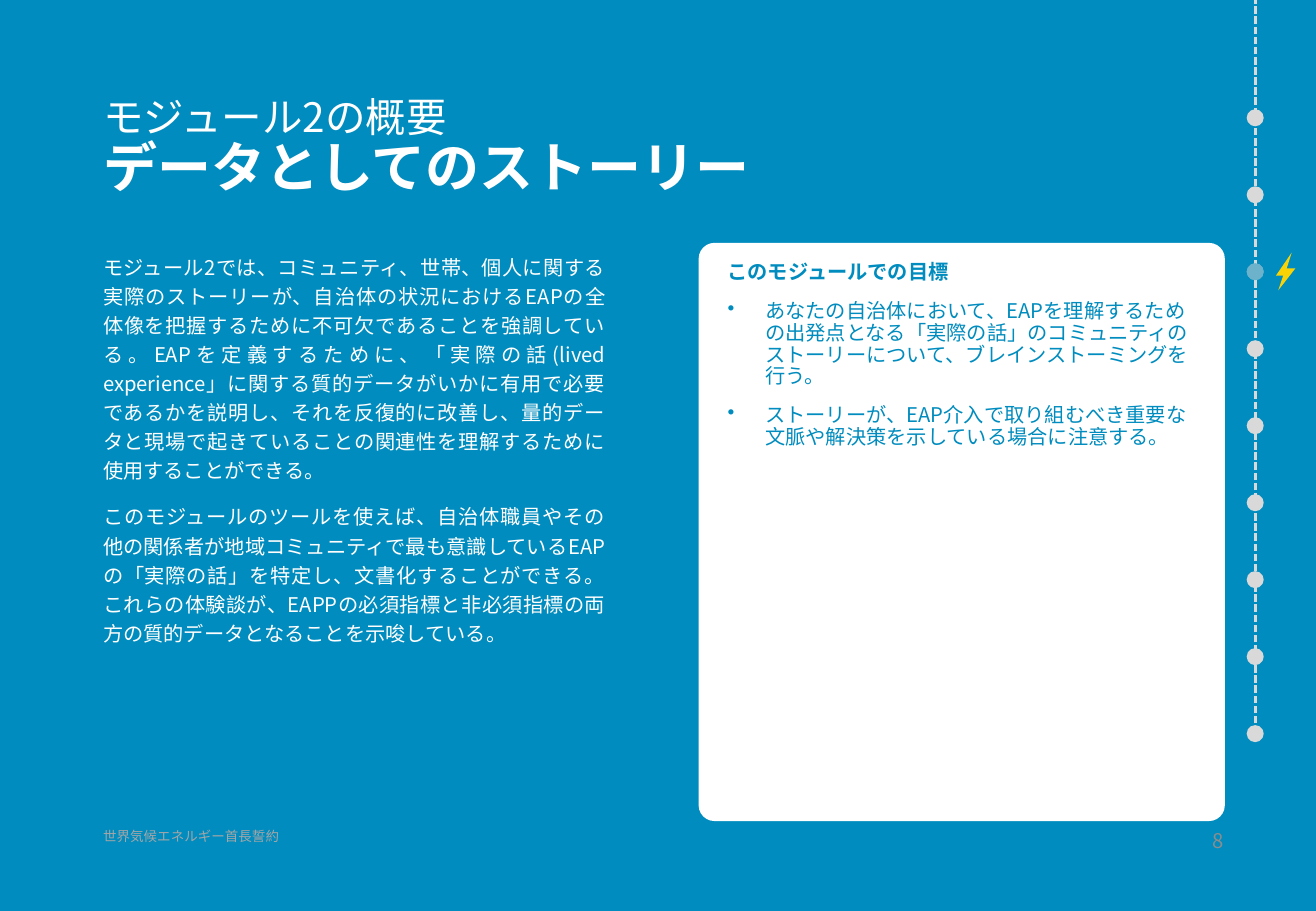
from dataclasses import dataclass

import lxml.etree
import pptx
import pptx.dml.color
import pptx.enum.dml
import pptx.enum.shapes
import pptx.enum.text
import pptx.oxml.ns
import pptx.util

Inches = pptx.util.Inches
Pt = pptx.util.Pt
Shapes = pptx.enum.shapes.MSO_SHAPE
Align = pptx.enum.text.PP_ALIGN
qn = pptx.oxml.ns.qn


@dataclass(frozen=True)
class Theme:
    font: str = "Noto Sans CJK JP"
    blue: str = "008CBE"
    white: str = "FFFFFF"
    grey: str = "D9D9D9"
    footer_grey: str = "A6A6A6"
    number_grey: str = "8C8C8C"
    yellow: str = "FAD307"
    footer_size: int = 8
    body_size: int = 12
    lead_size: int = 24
    title_size: int = 32


THEME = Theme()

BODY = [
    "モジュール2では、コミュニティ、世帯、個人に関する実際のストーリーが、自治体の状況におけるEAPの全体像を把握するために不可欠であることを強調している。EAPを定義するために、「実際の話(lived experience」に関する質的データがいかに有用で必要であるかを説明し、それを反復的に改善し、量的データと現場で起きていることの関連性を理解するために使用することができる。",
    "このモジュールのツールを使えば、自治体職員やその他の関係者が地域コミュニティで最も意識しているEAPの「実際の話」を特定し、文書化することができる。これらの体験談が、EAPPの必須指標と非必須指標の両方の質的データとなることを示唆している。",
]
GOALS_HEADING = "このモジュールでの目標"
GOALS = [
    "あなたの自治体において、EAPを理解するための出発点となる「実際の話」のコミュニティのストーリーについて、ブレインストーミングを行う。",
    "ストーリーが、EAP介入で取り組むべき重要な文脈や解決策を示している場合に注意する。",
]

TIMELINE_X = 10.33
FIRST_STOP, LAST_STOP, STOP_COUNT = 0.97, 6.04, 9
CURRENT_STOP = 2
DOT_SIZE = 0.14
BOLT_HALVES = [
    [(10.57, 2.27), (10.5, 2.27), (10.63, 2.08), (10.58, 2.24)],
    [(10.58, 2.21), (10.66, 2.21), (10.52, 2.39), (10.57, 2.24)],
]


def rgb(color):
    return pptx.dml.color.RGBColor.from_string(color)


def set_attributes(target, values):
    for name, value in values.items():
        setattr(target, name, value)


def paint(shape, color, opacity=None):
    """Fill a shape without line or shadow; opacity is in percent."""
    shape.shadow.inherit = False
    shape.fill.solid()
    shape.fill.fore_color.rgb = rgb(color)
    shape.line.fill.background()
    if opacity is not None:
        color_element = shape.fill._xPr.find(".//" + qn("a:srgbClr"))
        alpha = lxml.etree.SubElement(color_element, qn("a:alpha"))
        alpha.set("val", str(opacity * 1000))


def add_bullet(paragraph, indent=0.31):
    properties = paragraph._p.get_or_add_pPr()
    properties.set("marL", str(Inches(indent)))
    properties.set("indent", str(-Inches(indent)))
    lxml.etree.SubElement(properties, qn("a:buChar")).set("char", "•")


def add_run(paragraph, text, size, color, bold=False):
    run = paragraph.add_run()
    run.text = text
    set_attributes(run.font, {"name": THEME.font, "size": Pt(size), "bold": bold})
    run.font.color.rgb = rgb(color)
    east_asian = lxml.etree.SubElement(run._r.get_or_add_rPr(), qn("a:ea"))
    east_asian.set("typeface", THEME.font)


def prepare_frame(shape, inset_x=0.1, inset_y=0.05):
    frame = shape.text_frame
    set_attributes(frame, {
        "word_wrap": True,
        "vertical_anchor": pptx.enum.text.MSO_ANCHOR.TOP,
        "margin_left": Inches(inset_x), "margin_right": Inches(inset_x),
        "margin_top": Inches(inset_y), "margin_bottom": Inches(inset_y),
    })
    return frame


def add_text_box(slide, left, top, width, height):
    box = slide.shapes.add_textbox(Inches(left), Inches(top), Inches(width), Inches(height))
    return prepare_frame(box)


def next_paragraph(frame, first, **values):
    paragraph = frame.paragraphs[0] if first else frame.add_paragraph()
    if not first:
        paragraph.space_before = Pt(10)
    set_attributes(paragraph, values)
    return paragraph


def add_title(slide):
    frame = add_text_box(slide, 0.75, 0.75, 9.33, 1.08)
    paragraph = next_paragraph(frame, True, line_spacing=0.9)
    add_run(paragraph, "モジュール2の概要", THEME.lead_size, THEME.white)
    paragraph.add_line_break()
    add_run(paragraph, "データとしてのストーリー", THEME.title_size, THEME.white, True)


def add_body(slide):
    frame = add_text_box(slide, 0.75, 2.01, 4.33, 4.76)
    for index, text in enumerate(BODY):
        paragraph = next_paragraph(frame, index == 0, line_spacing=1.2, alignment=Align.JUSTIFY)
        add_run(paragraph, text, THEME.body_size, THEME.white)


def add_goals_card(slide):
    card = slide.shapes.add_shape(
        Shapes.ROUNDED_RECTANGLE, Inches(5.75), Inches(2), Inches(4.33), Inches(4.76))
    card.adjustments[0] = 0.03
    paint(card, THEME.white)
    frame = prepare_frame(card, 0.2, 0.12)
    for index, text in enumerate([GOALS_HEADING, *GOALS]):
        heading = index == 0
        paragraph = next_paragraph(frame, heading, line_spacing=0.9, alignment=Align.LEFT)
        if not heading:
            add_bullet(paragraph)
        add_run(paragraph, text, THEME.body_size, THEME.blue, heading)


def add_dot(slide, center_y, color, opacity=None):
    dot = slide.shapes.add_shape(
        Shapes.OVAL, Inches(TIMELINE_X - DOT_SIZE / 2), Inches(center_y - DOT_SIZE / 2),
        Inches(DOT_SIZE), Inches(DOT_SIZE))
    paint(dot, color, opacity)


def add_timeline(slide):
    line = slide.shapes.add_connector(
        pptx.enum.shapes.MSO_CONNECTOR.STRAIGHT,
        Inches(TIMELINE_X), Inches(LAST_STOP), Inches(TIMELINE_X), Inches(0))
    line.line.color.rgb = rgb(THEME.grey)
    set_attributes(line.line, {
        "width": Pt(1.5), "dash_style": pptx.enum.dml.MSO_LINE.SQUARE_DOT})
    lxml.etree.SubElement(line._element.spPr, qn("a:effectLst"))

    step = (LAST_STOP - FIRST_STOP) / (STOP_COUNT - 1)
    for index in range(STOP_COUNT):
        add_dot(slide, FIRST_STOP + index * step, THEME.grey)
    add_dot(slide, FIRST_STOP + CURRENT_STOP * step, THEME.blue, 50)


def add_bolt(slide):
    for half in BOLT_HALVES:
        start, *others = [(Inches(x), Inches(y)) for x, y in half]
        builder = slide.shapes.build_freeform(*start)
        builder.add_line_segments(others, close=True)
        paint(builder.convert_to_shape(), THEME.yellow)


def add_footer(slide):
    footer = next_paragraph(add_text_box(slide, 0.75, 6.77, 1.83, 0.4), True)
    add_run(footer, "世界気候エネルギー首長誓約", THEME.footer_size, THEME.footer_grey)
    number = next_paragraph(
        add_text_box(slide, 9.58, 6.77, 0.59, 0.4), True, alignment=Align.RIGHT)
    add_run(number, "8", THEME.body_size, THEME.number_grey)


def main():
    presentation = pptx.Presentation()
    set_attributes(presentation, {"slide_width": Inches(10.83), "slide_height": Inches(7.5)})
    slide = presentation.slides.add_slide(presentation.slide_layouts[6])
    slide.background.fill.solid()
    slide.background.fill.fore_color.rgb = rgb(THEME.blue)
    for add_part in (add_title, add_body, add_goals_card, add_timeline, add_bolt, add_footer):
        add_part(slide)
    presentation.save("out.pptx")


if __name__ == "__main__":
    main()
